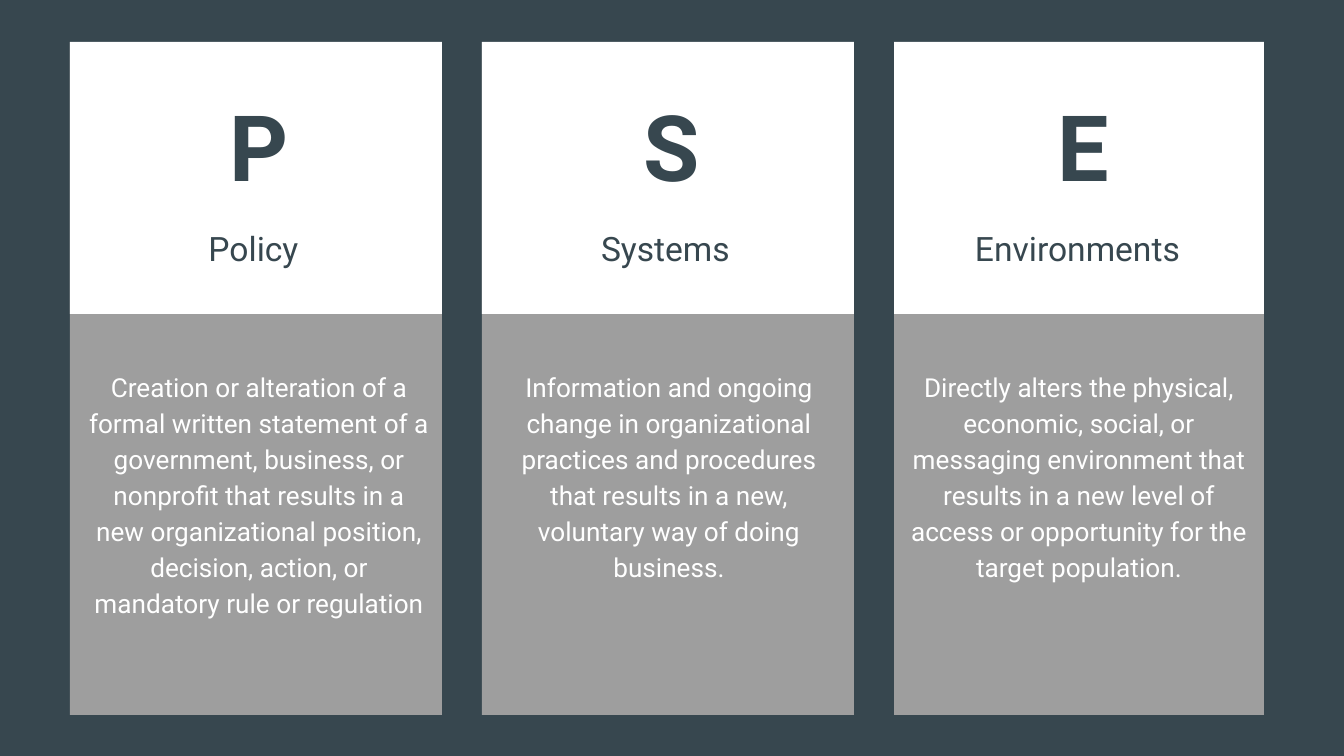
from dataclasses import dataclass

from pptx import Presentation
from pptx.dml.color import RGBColor
from pptx.enum.shapes import MSO_SHAPE
from pptx.enum.text import MSO_ANCHOR, PP_ALIGN
from pptx.slide import Slide
from pptx.util import Emu, Inches, Pt

PX_PER_INCH = 134.4
COLORS = {"slate": "37474F", "gray": "9E9E9E", "white": "FFFFFF"}
FONT = "Roboto"

LEFT, TOP, PITCH = 70, 42, 412
CARD_H, HEAD_H = 673, 272
LABEL_W, BODY_W = 329, 370


@dataclass(frozen=True)
class Card:
    letter: str
    title: str
    body: str
    width: int
    body_offset: int


CARDS = [
    Card("P", "Policy",
         "Creation or alteration of a formal written statement of a government, "
         "business, or nonprofit that results in a new organizational position, "
         "decision, action, or mandatory rule or regulation", 372, 4),
    Card("S", "Systems",
         "Information and ongoing change in organizational practices and procedures "
         "that results in a new, voluntary way of doing business.", 372, 2),
    Card("E", "Environments",
         "Directly alters the physical, economic, social, or messaging environment "
         "that results in a new level of access or opportunity for the target "
         "population.", 370, 0),
]


def px(n: int) -> Emu:
    return Emu(round(n * 914400 / PX_PER_INCH))


def rgb(name: str) -> RGBColor:
    return RGBColor.from_string(COLORS[name])


def add_panel(s: Slide, x: int, y: int, w: int, h: int, color: str) -> None:
    sp = s.shapes.add_shape(MSO_SHAPE.RECTANGLE, px(x), px(y), px(w), px(h))
    sp.shadow.inherit = False
    sp.fill.solid()
    sp.fill.fore_color.rgb = rgb(color)
    sp.line.fill.background()


def add_text(s: Slide, x: int, y: int, w: int, h: int, text: str, size: int,
             color: str, bold: bool = False, spacing: float = 1.0) -> None:
    tf = s.shapes.add_textbox(px(x), px(y), px(w), px(h)).text_frame
    tf.word_wrap = True
    tf.vertical_anchor = MSO_ANCHOR.TOP
    tf.margin_left = tf.margin_right = tf.margin_top = tf.margin_bottom = Inches(0.1)
    p = tf.paragraphs[0]
    p.text = text
    p.alignment = PP_ALIGN.CENTER
    p.line_spacing = spacing
    p.font.name = FONT
    p.font.size = Pt(size)
    p.font.bold = bold
    p.font.color.rgb = rgb(color)


def add_card(s: Slide, x: int, card: Card) -> None:
    add_panel(s, x, TOP, card.width, CARD_H, "gray")
    add_panel(s, x, TOP, card.width, HEAD_H, "white")
    add_text(s, x + 19, 214, LABEL_W, 101, card.title, 18, "slate")
    add_text(s, x + 25, 77, LABEL_W, 112, card.letter, 49, "slate", bold=True)
    add_text(s, x + card.body_offset, 353, BODY_W, 179, card.body, 14, "white",
             spacing=1.15)


def main() -> None:
    prs = Presentation()
    prs.slide_width, prs.slide_height = px(1344), px(756)
    s = prs.slides.add_slide(prs.slide_layouts[6])
    s.background.fill.solid()
    s.background.fill.fore_color.rgb = rgb("slate")
    for i, card in enumerate(CARDS):
        add_card(s, LEFT + i * PITCH, card)
    prs.save("out.pptx")


if __name__ == "__main__":
    main()
